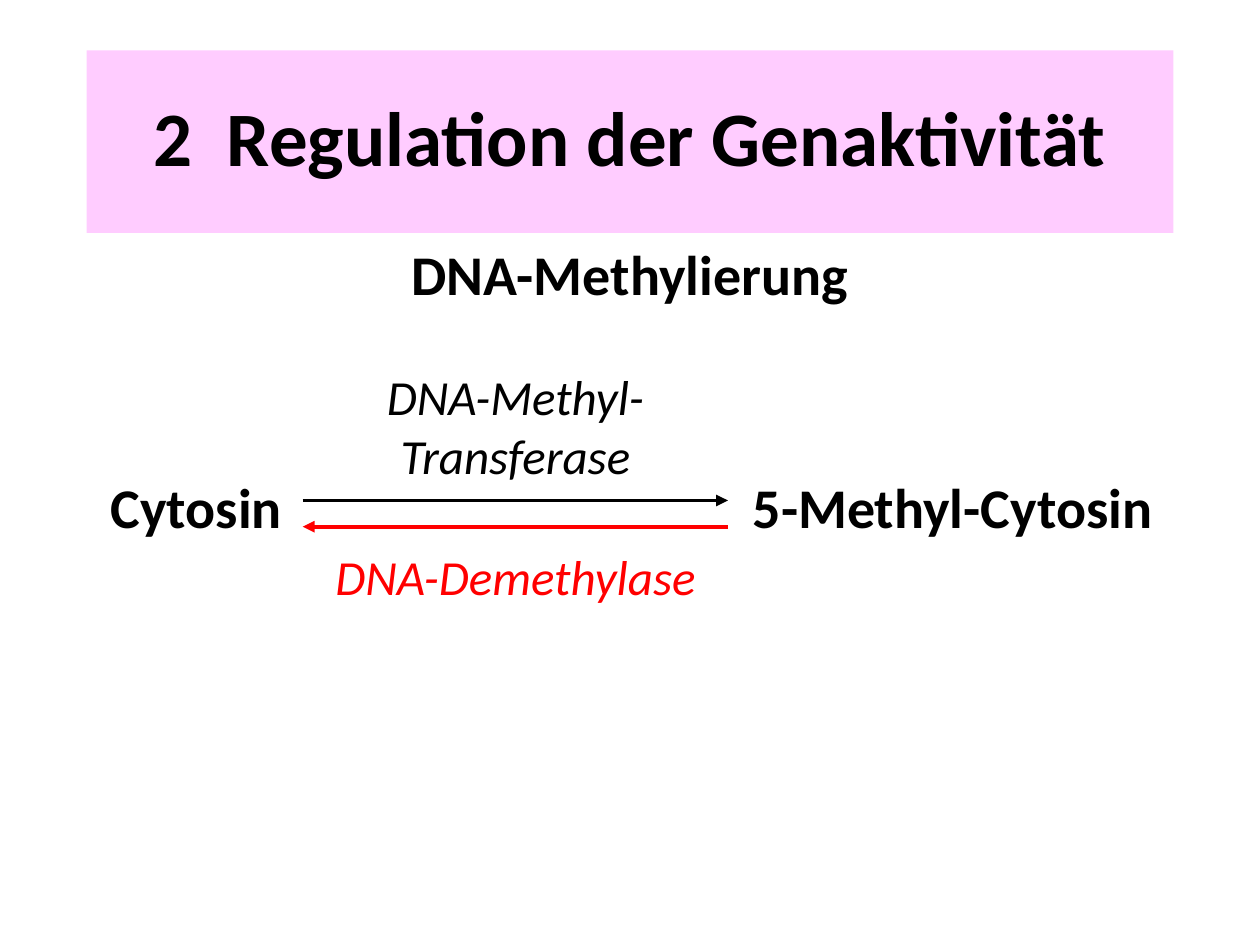
from lxml import etree
from pptx import Presentation
from pptx.dml.color import RGBColor
from pptx.enum.shapes import MSO_CONNECTOR, MSO_SHAPE
from pptx.enum.text import MSO_ANCHOR, PP_ALIGN
from pptx.oxml.ns import qn
from pptx.util import Pt

BLACK = RGBColor(0x00, 0x00, 0x00)
RED = RGBColor(0xFF, 0x00, 0x00)
PINK = RGBColor(0xFF, 0xCC, 0xFF)

RECT = MSO_SHAPE.RECTANGLE
STRAIGHT = MSO_CONNECTOR.STRAIGHT
LEFT, CENTER = PP_ALIGN.LEFT, PP_ALIGN.CENTER
TOP, MIDDLE = MSO_ANCHOR.TOP, MSO_ANCHOR.MIDDLE


def write(sp, text, font, size=32, color=BLACK, bold=False, italic=False,
          align=CENTER, anchor=TOP, spacing=1.0):
    tf = sp.text_frame
    tf.word_wrap = True
    tf.vertical_anchor = anchor
    p = tf.paragraphs[0]
    p.alignment = align
    p.line_spacing = spacing
    r = p.add_run()
    r.text = text
    r.font.name = font
    r.font.size = Pt(size)
    r.font.bold = bold
    r.font.italic = italic
    r.font.color.rgb = color


class SlideBuilder:
    font = "Calibri"
    line_width = 2.25

    def __init__(self, slide):
        self.s = slide

    def panel(self, text, x, y, w, h, fill, **fmt):
        sp = self.s.shapes.add_shape(RECT, Pt(x), Pt(y), Pt(w), Pt(h))
        sp.shadow.inherit = False
        sp.fill.solid()
        sp.fill.fore_color.rgb = fill
        sp.line.fill.background()
        write(sp, text, self.font, **fmt)

    def label(self, text, x, y, w, h, **fmt):
        sp = self.s.shapes.add_textbox(Pt(x), Pt(y), Pt(w), Pt(h))
        write(sp, text, self.font, **fmt)

    def arrow(self, x1, x2, y, color):
        """Draw a horizontal arrow with its head at x2."""
        c = self.s.shapes.add_connector(STRAIGHT, Pt(x1), Pt(y), Pt(x2), Pt(y))
        c.line.color.rgb = color
        c.line.width = Pt(self.line_width)
        etree.SubElement(c.line._get_or_add_ln(), qn("a:tailEnd"), type="triangle")
        etree.SubElement(c._element.spPr, qn("a:effectLst"))


def main():
    prs = Presentation()
    prs.slide_width, prs.slide_height = Pt(720), Pt(540)
    b = SlideBuilder(prs.slides.add_slide(prs.slide_layouts[6]))

    margin, content_w = 49.5, 621
    b.panel("2  Regulation der Genaktivität", margin, 28.75, content_w, 104.4, PINK,
            size=44, bold=True, anchor=MIDDLE, spacing=0.9)
    b.label("DNA-Methylierung", margin, 133.2, content_w, 46, bold=True)

    substance_y = 266.4
    b.label("Cytosin", 56, substance_y, 117, 46, bold=True, align=LEFT)
    b.label("5-Methyl-Cytosin", 423, substance_y, 248, 46, bold=True, align=LEFT)

    start, end = 173, 416
    enzyme = dict(size=28, italic=True)
    b.label("DNA-Methyl-Transferase", start, 206, end - start, 75, **enzyme)
    b.label("DNA-Demethylase", start, 308.5, end - start, 41, color=RED, **enzyme)
    b.arrow(start, end, 286, BLACK)
    b.arrow(end, start, 301, RED)

    prs.save("out.pptx")


if __name__ == "__main__":
    main()
